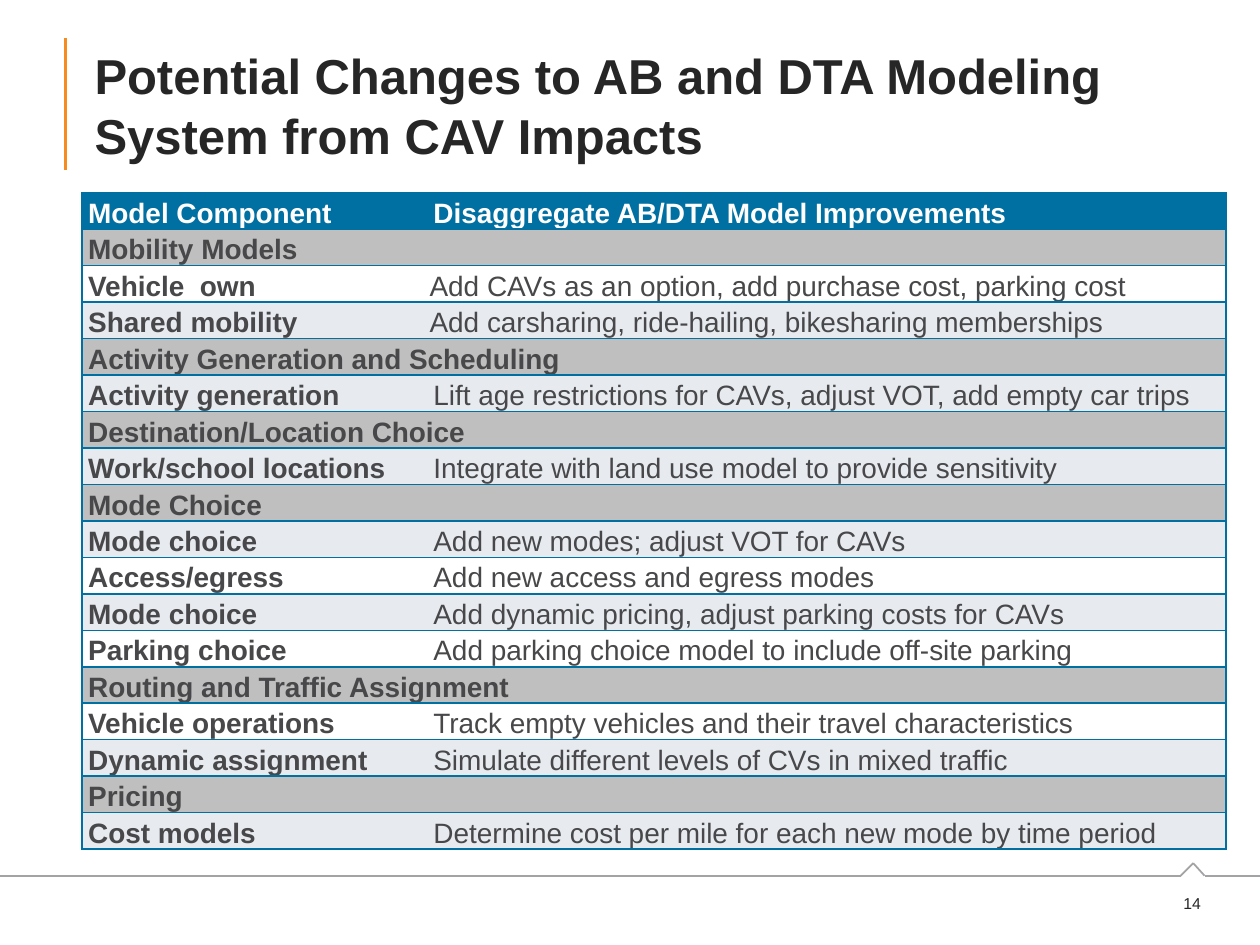
"""Build a slide tabulating model changes that respond to CAV impacts."""
from itertools import pairwise

from lxml.etree import SubElement
from pptx import Presentation
from pptx.dml.color import RGBColor
from pptx.enum.shapes import MSO_CONNECTOR
from pptx.enum.text import MSO_ANCHOR, MSO_AUTO_SIZE, PP_ALIGN
from pptx.oxml.ns import qn
from pptx.util import Inches, Pt

BLUE = RGBColor(0x00, 0x6F, 0xA1)
ORANGE = RGBColor(0xF6, 0x8B, 0x1F)
RULE_GRAY = RGBColor(0xA3, 0xA3, 0xA5)
SECTION_GRAY = RGBColor(0xBF, 0xBF, 0xBF)
BAND = RGBColor(0xE7, 0xEB, 0xF0)
WHITE = RGBColor(0xFF, 0xFF, 0xFF)
INK = RGBColor(0x26, 0x26, 0x26)
BODY = RGBColor(0x48, 0x48, 0x4A)
FONT = "Arial"

TITLE = "Potential Changes to AB and DTA Modeling System from CAV Impacts"
PAGE = "14"
HEADER = ("Model Component", "Disaggregate AB/DTA Model Improvements")
SECTIONS = [
    ("Mobility Models", [
        ("Vehicle  own", "Add CAVs as an option, add purchase cost, parking cost", WHITE),
        ("Shared mobility", "Add carsharing, ride-hailing, bikesharing memberships", BAND),
    ]),
    ("Activity Generation and Scheduling", [
        ("Activity generation",
         "Lift age restrictions for CAVs, adjust VOT, add empty car trips", BAND),
    ]),
    ("Destination/Location Choice", [
        ("Work/school locations", "Integrate with land use model to provide sensitivity", BAND),
    ]),
    ("Mode Choice", [
        ("Mode choice", "Add new modes; adjust VOT for CAVs", BAND),
        ("Access/egress", "Add new access and egress modes", WHITE),
        ("Mode choice", "Add dynamic pricing, adjust parking costs for CAVs", BAND),
        ("Parking choice", "Add parking choice model to include off-site parking", WHITE),
    ]),
    ("Routing and Traffic Assignment", [
        ("Vehicle operations", "Track empty vehicles and their travel characteristics", WHITE),
        ("Dynamic assignment", "Simulate different levels of CVs in mixed traffic", BAND),
    ]),
    ("Pricing", [
        ("Cost models", "Determine cost per mile for each new mode by time period", BAND),
    ]),
]
INDENTED_SECTION = "Mobility Models"
INDENT = 0.67
COLUMN_WIDTHS = (2.04, 0.7, 6.34)
TABLE_HEIGHT = 5.21
FOOTER_RULE = [(0, 6.95), (9.37, 6.95), (9.47, 6.85), (9.56, 6.95), (10, 6.95)]


def add_line(slide, start, end, color, width):
    line = slide.shapes.add_connector(
        MSO_CONNECTOR.STRAIGHT, *(Inches(v) for v in (*start, *end)))
    line.line.color.rgb = color
    line.line.width = Pt(width)
    SubElement(line._element.spPr, qn("a:effectLst"))


def style(paragraph, size, color, bold=False):
    for font in (paragraph.font, *(run.font for run in paragraph.runs)):
        font.name, font.size, font.bold = FONT, Pt(size), bold
        font.color.rgb = color


def set_borders(cell, sides):
    properties = cell._tc.get_or_add_tcPr()
    for side in "LRTB":
        border = SubElement(properties, qn(f"a:ln{side}"), w=str(Pt(1)))
        if side in sides:
            fill = SubElement(border, qn("a:solidFill"))
            SubElement(fill, qn("a:srgbClr"), val=str(BLUE))
        else:
            SubElement(border, qn("a:noFill"))


def fill_span(table, row, first, last, text, fill, color, bold, indent=0):
    for column in range(first, last + 1):
        sides = "TB" + "L" * (column == 0) + "R" * (last == 2)
        cell = table.cell(row, column)
        set_borders(cell, sides)
        cell.fill.solid()
        cell.fill.fore_color.rgb = fill
        cell.margin_left = cell.margin_right = Inches(0.05)
        cell.margin_top = cell.margin_bottom = 0
        style(cell.text_frame.paragraphs[0], 16, color, bold)
    cell = table.cell(row, first)
    if last > first:
        cell.merge(table.cell(row, last))
    cell.vertical_anchor = MSO_ANCHOR.BOTTOM
    cell.text = text
    paragraph = cell.text_frame.paragraphs[0]
    paragraph.line_spacing = 1.08
    style(paragraph, 16, color, bold)
    if indent:
        paragraph._p.get_or_add_pPr().set("marL", str(Inches(indent)))


def add_model_table(slide):
    row_count = 1 + sum(1 + len(items) for _, items in SECTIONS)
    table = slide.shapes.add_table(
        row_count, len(COLUMN_WIDTHS), Inches(0.65), Inches(1.53),
        Inches(sum(COLUMN_WIDTHS)), Inches(TABLE_HEIGHT)).table
    for column, width in zip(table.columns, COLUMN_WIDTHS):
        column.width = Inches(width)
    for row in table.rows:
        row.height = Inches(TABLE_HEIGHT / row_count)

    fill_span(table, 0, 0, 1, HEADER[0], BLUE, WHITE, True)
    fill_span(table, 0, 2, 2, HEADER[1], BLUE, WHITE, True)
    row = 1
    for section, items in SECTIONS:
        fill_span(table, row, 0, 2, section, SECTION_GRAY, BODY, True)
        indented = section == INDENTED_SECTION
        split = 1 if indented else 2
        for row, (component, change, fill) in enumerate(items, row + 1):
            fill_span(table, row, 0, split - 1, component, fill, BODY, True)
            fill_span(table, row, split, 2, change, fill, BODY, False,
                      INDENT if indented else 0)
        row += 1


def add_title(slide):
    title = slide.shapes.title
    title.left, title.top = Inches(0.65), Inches(0.3)
    title.width, title.height = Inches(8.85), Inches(1.05)
    frame = title.text_frame
    frame.text = TITLE
    frame.auto_size = MSO_AUTO_SIZE.NONE
    frame.vertical_anchor = MSO_ANCHOR.MIDDLE
    heading = frame.paragraphs[0]
    heading.alignment = PP_ALIGN.LEFT
    heading.line_spacing = 1.03
    style(heading, 28, INK, True)


def add_page_number(slide):
    frame = slide.shapes.add_textbox(
        Inches(9.25), Inches(7.04), Inches(0.42), Inches(0.25)).text_frame
    frame.text = PAGE
    frame.word_wrap = True
    frame.vertical_anchor = MSO_ANCHOR.MIDDLE
    frame.margin_right = Inches(0.14)
    number = frame.paragraphs[0]
    number.alignment = PP_ALIGN.RIGHT
    style(number, 9, INK)


def main():
    deck = Presentation()
    deck.slide_width, deck.slide_height = Inches(10), Inches(7.5)
    slide = deck.slides.add_slide(deck.slide_layouts[5])
    add_line(slide, (0.52, 0.3), (0.52, 1.35), ORANGE, 1.5)
    for start, end in pairwise(FOOTER_RULE):
        add_line(slide, start, end, RULE_GRAY, 1)
    add_page_number(slide)
    add_title(slide)
    add_model_table(slide)
    deck.save("out.pptx")


if __name__ == "__main__":
    main()
